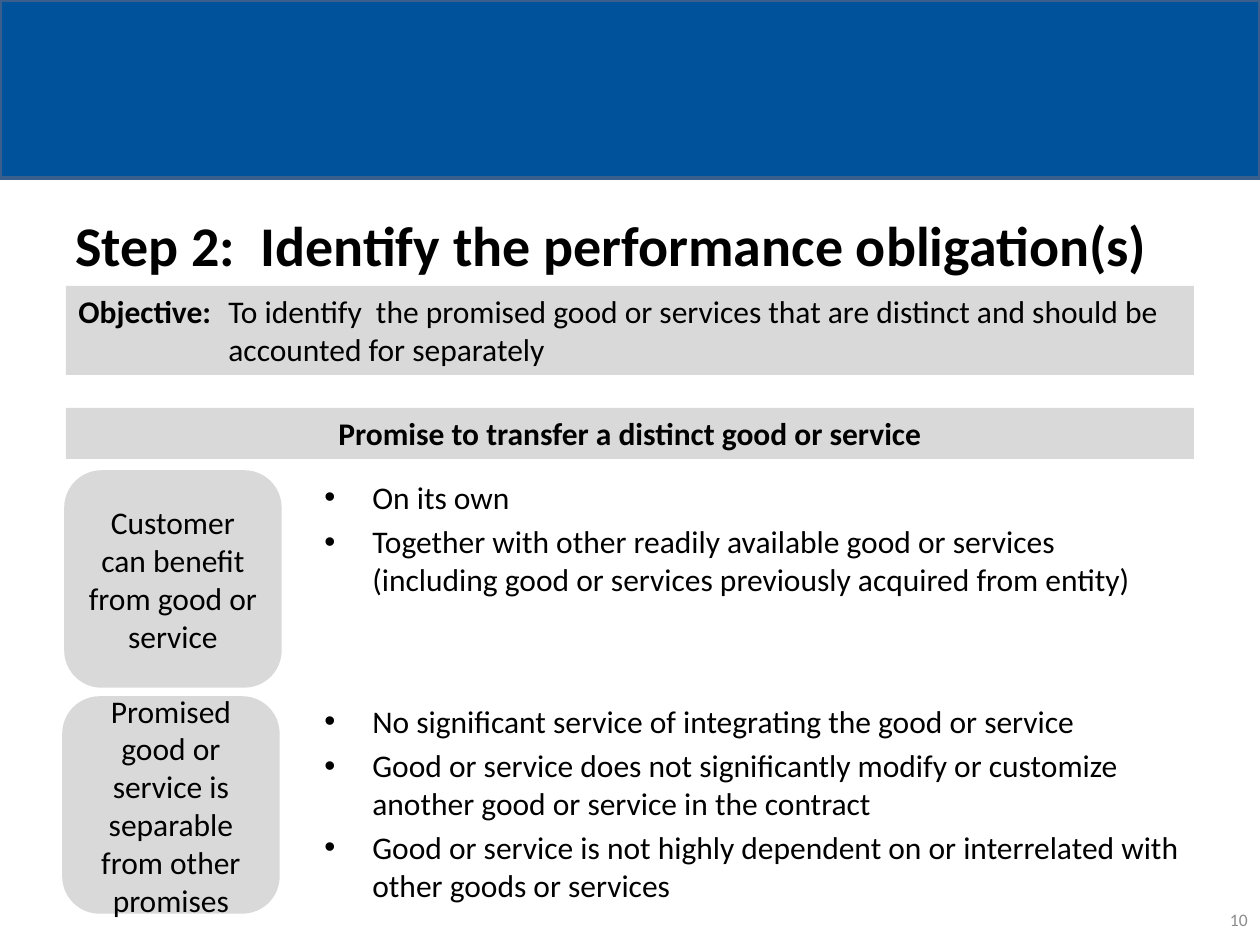
from lxml import etree
from pptx import Presentation
from pptx.dml.color import RGBColor
from pptx.enum.shapes import MSO_SHAPE as Shape
from pptx.enum.text import MSO_ANCHOR as Anchor, PP_ALIGN as Align
from pptx.oxml.ns import qn
from pptx.util import Pt

BLUE, EDGE, GREY, BLACK, DIM = "00539B", "3A5F8C", "D9D9D9", "000000", "8C8C8C"
TITLE = "Step 2:  Identify the performance obligation(s)"
GOAL = ("Objective:", "To identify  the promised good or services that are "
        "distinct and should be accounted for separately")
HEAD = "Promise to transfer a distinct good or service"
# card left, card top, card text, list top, list points
TESTS = [
    (66, 472, "Customer can benefit from good or service", 472, [
        "On its own",
        "Together with other readily available good or services "
        "(including good or services previously acquired from entity)"]),
    (64, 698, "Promised good or service is separable from other promises", 696, [
        "No significant service of integrating the good or service",
        "Good or service does not significantly modify or customize "
        "another good or service in the contract",
        "Good or service is not highly dependent on or interrelated with "
        "other goods or services"]),
]
PAGE = "10"
CARD, LIST_X, LIST_W = 214, 312, 882
GOAL_IN, LIST_IN = 150, 48


def emu(px):
    return round(px * 914400 / 126)


def rgb(code):
    return RGBColor.from_string(code)


def block(kind, box, fill, line=None):
    shape = slide.shapes.add_shape(kind, *map(emu, box))
    shape.shadow.inherit = False
    shape.fill.solid()
    shape.fill.fore_color.rgb = rgb(fill)
    if line:
        shape.line.color.rgb = rgb(line)
        shape.line.width = Pt(2)
    else:
        shape.line.fill.background()
    return shape


def label(box):
    return slide.shapes.add_textbox(*map(emu, box))


def hang(para, px):
    """Indent all lines but the first by px."""
    props = para._p.get_or_add_pPr()
    props.set("marL", str(emu(px)))
    props.set("indent", str(-emu(px)))
    return props


def style(para, size=18, color=BLACK, bold=None, align=Align.LEFT):
    para.alignment = align
    font = para.font
    font.name, font.size, font.bold = "Calibri", Pt(size), bold
    font.color.rgb = rgb(color)


def write(shape, text, anchor=Anchor.TOP, **look):
    frame = shape.text_frame
    frame.word_wrap = True
    frame.vertical_anchor = anchor
    para = frame.paragraphs[0]
    para.text = text
    style(para, **look)


def bullets(shape, points):
    frame = shape.text_frame
    frame.word_wrap = True
    for i, point in enumerate(points):
        para = frame.add_paragraph() if i else frame.paragraphs[0]
        para.text = point
        props = hang(para, LIST_IN)
        etree.SubElement(props, qn("a:buFont"), typeface="Arial")
        etree.SubElement(props, qn("a:buChar"), char="•")
        para.space_before = Pt(3.6 if i else 0)
        style(para)


deck = Presentation()
deck.slide_width, deck.slide_height = emu(1260), emu(945)
slide = deck.slides.add_slide(deck.slide_layouts[6])

block(Shape.RECTANGLE, (0, 0, 1260, 178), BLUE, EDGE)
write(label((966, 895, 294, 50)), PAGE, Anchor.MIDDLE,
      size=10, color=DIM, align=Align.RIGHT)
write(label((63, 199, 1134, 91)), TITLE, Anchor.MIDDLE, size=32, bold=True)

goal = block(Shape.RECTANGLE, (66, 286, 1128, 89), GREY)
write(goal, "")
para = goal.text_frame.paragraphs[0]
hang(para, GOAL_IN)
lead, rest = para.add_run(), para.add_run()
lead.text, rest.text = GOAL[0], "\t" + GOAL[1]
lead.font.bold = True

write(block(Shape.RECTANGLE, (66, 408, 1128, 51), GREY), HEAD,
      bold=True, align=Align.CENTER)

for left, top, text, list_top, points in TESTS:
    card = block(Shape.ROUNDED_RECTANGLE, (left, top, CARD, CARD), GREY, GREY)
    write(card, text, Anchor.MIDDLE, align=Align.CENTER)
    bullets(label((LIST_X, list_top, LIST_W, CARD)), points)

deck.save("out.pptx")
